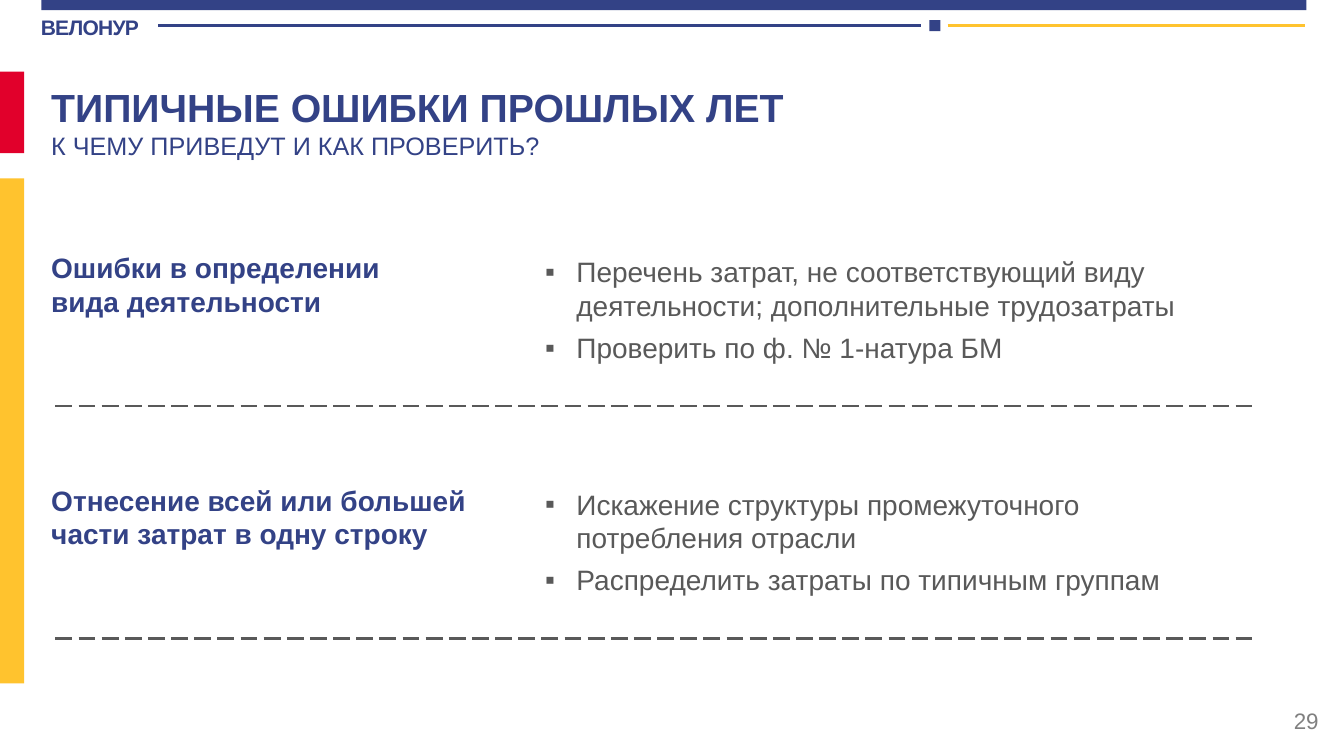
import lxml.etree
import pptx
import pptx.dml.color
import pptx.enum.dml
import pptx.enum.shapes
import pptx.enum.text
import pptx.oxml.ns
import pptx.util

COLS, ROWS = 133.33, 75
NAVY, RED, AMBER = "334286", "E1002B", "FFC32E"
GREY, PALE_GREY = "595959", "808080"
ALIGN = pptx.enum.text.PP_ALIGN
ANCHOR = pptx.enum.text.MSO_ANCHOR

# heading, width of its box in columns, bullets
MISTAKES = [
    ("Ошибки в определении вида деятельности", 35.4,
     ["Перечень затрат, не соответствующий виду деятельности; дополнительные трудозатраты",
      "Проверить по ф. № 1-натура БМ"]),
    ("Отнесение всей или большей части затрат в одну строку", 43.7,
     ["Искажение структуры промежуточного потребления отрасли",
      "Распределить затраты по типичным группам"]),
]
MISTAKE_PITCH = 23.05


def rgb(color):
    return pptx.dml.color.RGBColor.from_string(color)


def add_child(parent, tag, **attrs):
    return lxml.etree.SubElement(parent, pptx.oxml.ns.qn(tag), **attrs)


def write(p, text, size=20, color=NAVY, bold=False, font="Arial",
          align=ALIGN.LEFT, before=0, spacing=None, bullet=None):
    p.alignment = align
    p.space_before = pptx.util.Pt(before)
    r = p.add_run()
    r.text = text
    r.font.name, r.font.size, r.font.bold = font, pptx.util.Pt(size), bold
    r.font.color.rgb = rgb(color)
    if spacing is not None:
        r._r.get_or_add_rPr().set("spc", str(round(spacing * 100)))
    if bullet:
        pPr = p._p.get_or_add_pPr()
        indent = pptx.util.Inches(0.31)
        pPr.set("marL", str(indent))
        pPr.set("indent", str(-indent))
        add_child(pPr, "a:buFont", typeface=font)
        add_child(pPr, "a:buChar", char=bullet)


class Deck:
    """Slide builder; positions are columns and rows of a 0.1 inch grid."""

    def __init__(self):
        self.prs = pptx.Presentation()
        self.prs.slide_width = pptx.util.Inches(13.33)
        self.prs.slide_height = pptx.util.Inches(7.5)
        self.s = self.prs.slides.add_slide(self.prs.slide_layouts[6])

    def x(self, col):
        return round(self.prs.slide_width * col / COLS)

    def y(self, row):
        return round(self.prs.slide_height * row / ROWS)

    def box(self, col, row, width, height):
        return self.x(col), self.y(row), self.x(width), self.y(height)

    def block(self, col, row, width, height, color):
        sp = self.s.shapes.add_shape(pptx.enum.shapes.MSO_SHAPE.RECTANGLE,
                                     *self.box(col, row, width, height))
        sp.shadow.inherit = False
        sp.fill.solid()
        sp.fill.fore_color.rgb = rgb(color)
        sp.line.fill.background()

    def rule(self, col, row, end_col, color, width, dash=None):
        line = self.s.shapes.add_connector(
            pptx.enum.shapes.MSO_CONNECTOR.STRAIGHT,
            self.x(col), self.y(row), self.x(end_col), self.y(row))
        line.line.color.rgb = rgb(color)
        line.line.width = pptx.util.Pt(width)
        if dash:
            line.line.dash_style = dash
        add_child(line._element.spPr, "a:effectLst")

    def text(self, col, row, width, height, paragraphs, anchor=ANCHOR.TOP, inset=True):
        """Each paragraph is a (text, format) pair."""
        tf = self.s.shapes.add_textbox(*self.box(col, row, width, height)).text_frame
        tf.word_wrap = True
        tf.vertical_anchor = anchor
        if not inset:
            tf.margin_left = tf.margin_right = tf.margin_top = tf.margin_bottom = 0
        for i, (text, style) in enumerate(paragraphs):
            p = tf.add_paragraph() if i else tf.paragraphs[0]
            write(p, text, **style)


def main():
    deck = Deck()

    deck.block(4.1, 0, 125.5, 1, NAVY)
    deck.block(0, 7.1, 2.4, 8.1, RED)
    deck.block(0, 17.7, 2.4, 50.1, AMBER)
    deck.text(4.05, 1.4, 11.5, 3.2,
              [("ВЕЛОНУР", dict(size=15, bold=True, before=1, spacing=-0.5))], inset=False)
    deck.rule(15.7, 2.5, 91.4, NAVY, 2)
    deck.block(92.2, 2, 1.1, 1.1, NAVY)
    deck.rule(94, 2.5, 129.5, AMBER, 2)

    deck.text(4.1, 7.8, 121.3, 9.3,
              [("ТИПИЧНЫЕ ОШИБКИ ПРОШЛЫХ ЛЕТ", dict(size=28, bold=True)),
               ("К ЧЕМУ ПРИВЕДУТ И КАК ПРОВЕРИТЬ?", dict(size=18))])

    for i, (heading, width, bullets) in enumerate(MISTAKES):
        top = 24.4 + i * MISTAKE_PITCH
        deck.text(4.1, top, width, 7.7, [(heading, dict(bold=True))])
        deck.text(53.1, top + 0.4, 66.7, 11.9,
                  [(b, dict(color=GREY, before=6, bullet="▪")) for b in bullets])
        deck.rule(5.5, top + 15.9, 124.6, GREY, 1.5,
                  pptx.enum.dml.MSO_LINE.LONG_DASH)

    deck.text(101.8, 69.5, 30, 4,
              [("29", dict(size=16, color=PALE_GREY, align=ALIGN.RIGHT))],
              anchor=ANCHOR.MIDDLE)
    deck.prs.save("out.pptx")


if __name__ == "__main__":
    main()
